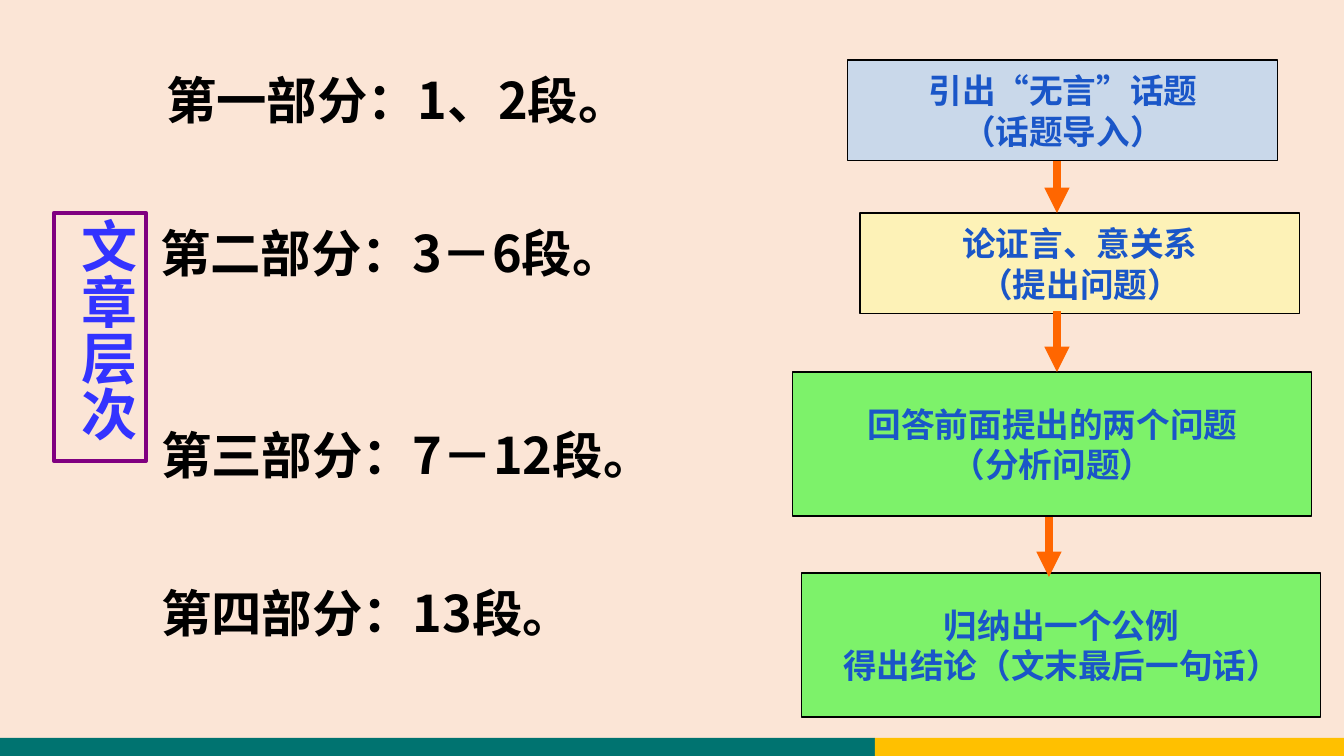
from dataclasses import dataclass

from lxml import etree
from pptx import Presentation
from pptx.dml.color import RGBColor
from pptx.enum.shapes import MSO_CONNECTOR, MSO_SHAPE
from pptx.enum.text import MSO_ANCHOR, PP_ALIGN
from pptx.oxml.ns import qn
from pptx.util import Emu, Pt

RECTANGLE = MSO_SHAPE.RECTANGLE
STRAIGHT = MSO_CONNECTOR.STRAIGHT
LEFT, CENTER = PP_ALIGN.LEFT, PP_ALIGN.CENTER
TOP, MIDDLE = MSO_ANCHOR.TOP, MSO_ANCHOR.MIDDLE
EMU_PER_PX = 914400 / 100.8


@dataclass(frozen=True)
class Theme:
    font: str = "Noto Sans CJK SC"
    background: str = "FBE5D6"
    teal: str = "007370"
    amber: str = "FFC000"
    purple: str = "800080"
    title: str = "3333FF"
    ink: str = "000000"
    step_text: str = "1A56C8"
    arrow: str = "FF6600"
    blue: str = "99CCFF"
    yellow: str = "FFFF99"
    green: str = "00FF00"
    title_size: int = 40
    section_size: int = 36
    step_size: int = 24
    step_spacing: int = 29


def px(length):
    return Emu(round(length * EMU_PER_PX))


def rgb(value):
    return RGBColor.from_string(value)


def write(shape, text, *, font, size, color, align=LEFT, anchor=MIDDLE,
          inset=0, spacing=None, wrap=True):
    """Fill a shape with bold text, one paragraph for each line."""
    frame = shape.text_frame
    frame.word_wrap = wrap
    frame.vertical_anchor = anchor
    frame.margin_left = frame.margin_right = px(inset)
    frame.margin_top = frame.margin_bottom = px(inset)
    for index, line in enumerate(text.split("\n")):
        paragraph = frame.paragraphs[0] if index == 0 else frame.add_paragraph()
        paragraph.alignment = align
        if spacing:
            paragraph.line_spacing = Pt(spacing)
        run = paragraph.add_run()
        run.text = line
        run.font.name = font
        run.font.size = Pt(size)
        run.font.bold = True
        run.font.color.rgb = rgb(color)
        east_asian = etree.SubElement(run._r.get_or_add_rPr(), qn("a:ea"))
        east_asian.set("typeface", font)


class LayerSlide:
    def __init__(self, presentation, theme):
        self.theme = theme
        self.slide = presentation.slides.add_slide(presentation.slide_layouts[6])
        fill = self.slide.background.fill
        fill.solid()
        fill.fore_color.rgb = rgb(theme.background)

    def box(self, left, top, width, height, fill=None, line=None,
            line_width=0.75, opacity=100):
        shape = self.slide.shapes.add_shape(
            RECTANGLE, px(left), px(top), px(width), px(height))
        shape.shadow.inherit = False
        if fill:
            shape.fill.solid()
            shape.fill.fore_color.rgb = rgb(fill)
            if opacity < 100:
                color = shape._element.spPr.find(qn("a:solidFill"))[0]
                etree.SubElement(color, qn("a:alpha")).set("val", str(opacity * 1000))
        else:
            shape.fill.background()
        if line:
            shape.line.color.rgb = rgb(line)
            shape.line.width = Pt(line_width)
        else:
            shape.line.fill.background()
        return shape

    def vertical_title(self, text, left, top, width, height):
        theme = self.theme
        shape = self.box(left, top, width, height, line=theme.purple, line_width=3)
        write(shape, text, font=theme.font, size=theme.title_size,
              color=theme.title, align=CENTER, anchor=TOP, inset=5)
        shape.text_frame._txBody.bodyPr.set("vert", "eaVert")

    def section(self, text, left, center):
        theme = self.theme
        height = 74
        shape = self.slide.shapes.add_textbox(
            px(left), px(center - height // 2), px(600), px(height))
        write(shape, text, font=theme.font, size=theme.section_size, color=theme.ink)

    def step(self, text, left, top, width, height, fill):
        theme = self.theme
        shape = self.box(left, top, width, height, fill, theme.ink, opacity=50)
        write(shape, text, font=theme.font, size=theme.step_size,
              color=theme.step_text, align=CENTER, inset=5,
              spacing=theme.step_spacing, wrap=False)

    def down_arrow(self, x, top, bottom):
        connector = self.slide.shapes.add_connector(
            STRAIGHT, px(x), px(top), px(x), px(bottom))
        connector.line.color.rgb = rgb(self.theme.arrow)
        connector.line.width = Pt(6)
        properties = connector._element.spPr
        line = properties.find(qn("a:ln"))
        etree.SubElement(line, qn("a:tailEnd")).set("type", "triangle")
        etree.SubElement(properties, qn("a:effectLst"))


def main():
    presentation = Presentation()
    presentation.slide_width, presentation.slide_height = px(1344), px(756)
    theme = Theme()
    slide = LayerSlide(presentation, theme)

    slide.box(0, 738, 875, 18, theme.teal)
    slide.box(875, 738, 469, 18, theme.amber)
    slide.vertical_title("文章层次", 54, 213, 92, 248)

    for text, left, center in (
        ("第一部分：1、2段。", 166, 99),
        ("第二部分：3－6段。", 160, 252),
        ("第三部分：7－12段。", 161, 454),
        ("第四部分：13段。", 161, 612),
    ):
        slide.section(text, left, center)

    for text, left, top, width, height, fill in (
        ("引出“无言”话题\n（话题导入）", 848, 60, 430, 101, theme.blue),
        ("论证言、意关系\n（提出问题）", 860, 213, 440, 101, theme.yellow),
        ("回答前面提出的两个问题\n（分析问题）", 793, 372, 519, 144, theme.green),
        ("归纳出一个公例\n得出结论（文末最后一句话）", 802, 573, 519, 144, theme.green),
    ):
        slide.step(text, left, top, width, height, fill)

    for x, top, bottom in ((1057, 161, 213), (1057, 311, 372), (1049, 517, 577)):
        slide.down_arrow(x, top, bottom)

    presentation.save("out.pptx")


if __name__ == "__main__":
    main()
